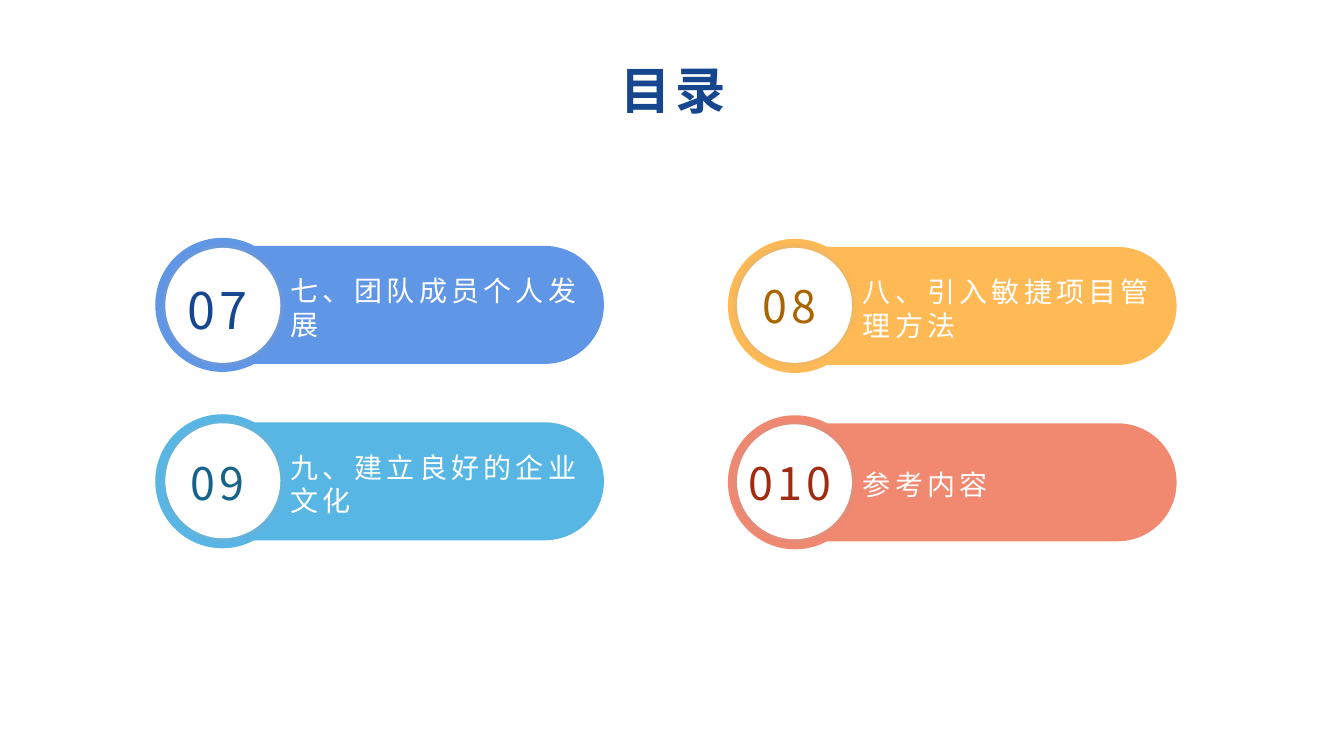
import pptx
import pptx.util
import pptx.dml.color
import pptx.enum.shapes
import pptx.enum.text
import pptx.oxml
import pptx.oxml.ns

Inches = pptx.util.Inches
Shape = pptx.enum.shapes.MSO_SHAPE
Align = pptx.enum.text.PP_ALIGN
Anchor = pptx.enum.text.MSO_ANCHOR

# Content: column, row, number, number size, label, pill colour, number colour
TITLE = "目录"
CHAPTERS = [
    (0, 0, "07", 36, "七、团队成员个人发展", "6096E6", "16468D"),
    (1, 0, "08", 32, "八、引入敏捷项目管理方法", "FFBA55", "AA6500"),
    (0, 1, "09", 32, "九、建立良好的企业文化", "58B6E5", "156389"),
    (1, 1, "010", 32, "参考内容", "F18870", "A12B10"),
]
FONT = "Noto Sans CJK SC"
NAVY, WHITE = "16468D", "FFFFFF"

# Grid
LEFT, TOP = 1.54, 2.36
COLUMN_STEP, ROW_STEP, COLUMN_DROP = 5.68, 1.75, 0.01
RING, DISC = 1.33, 1.14
RIM = (RING - DISC) / 2
PILL_WIDTH, PILL_HEIGHT = 4.11, 1.17
LABEL_WIDTH = 3.21


def color(hex_value):
    return pptx.dml.color.RGBColor.from_string(hex_value)


def box(left, top, width, height):
    return [Inches(round(v, 2)) for v in (left, top, width, height)]


def add_plain(slide, kind, place, fill):
    shape = slide.shapes.add_shape(kind, *box(*place))
    shape.shadow.inherit = False
    shape.fill.solid()
    shape.fill.fore_color.rgb = color(fill)
    shape.line.fill.background()
    return shape


def add_glow(shape):
    effects = shape._element.spPr.find(pptx.oxml.ns.qn("a:effectLst"))
    effects.append(pptx.oxml.parse_xml(
        f'<a:outerShdw {pptx.oxml.ns.nsdecls("a")} blurRad="{pptx.util.Pt(5)}" dist="0" '
        'dir="0" algn="ctr" rotWithShape="0"><a:srgbClr val="A6A6A6">'
        '<a:alpha val="40000"/></a:srgbClr></a:outerShdw>'))


def write(shape, text, size, ink, align, anchor, bold=False):
    frame = shape.text_frame
    frame.word_wrap = True
    frame.auto_size = pptx.enum.text.MSO_AUTO_SIZE.NONE
    frame.vertical_anchor = anchor
    frame.margin_left = frame.margin_right = Inches(0.1)
    frame.margin_top, frame.margin_bottom = Inches(0.05), 0
    paragraph = frame.paragraphs[0]
    paragraph.alignment = align
    run = paragraph.add_run()
    run.text = text
    run.font.size = pptx.util.Pt(size)
    run.font.bold = bold
    run.font.color.rgb = color(ink)
    run.font.name = FONT
    # Letter spacing and East Asian font
    properties = run.font._element
    properties.set("spc", "300")
    properties.append(pptx.oxml.parse_xml(
        f'<a:ea {pptx.oxml.ns.nsdecls("a")} typeface="{FONT}"/>'))


def add_chapter(slide, column, row, number, size, label, fill, ink):
    left = LEFT + column * COLUMN_STEP
    top = TOP + row * ROW_STEP + column * COLUMN_DROP
    pill_left, pill_top = left + 0.34, top + 0.08

    pill = add_plain(slide, Shape.ROUNDED_RECTANGLE,
                     (pill_left, pill_top, PILL_WIDTH, PILL_HEIGHT), fill)
    pill.adjustments[0] = 0.5
    add_plain(slide, Shape.OVAL, (left, top, RING, RING), fill)
    disc = add_plain(slide, Shape.OVAL, (left + RIM, top + RIM, DISC, DISC), WHITE)
    add_glow(disc)

    number_box = slide.shapes.add_textbox(
        *box(left, TOP + row * ROW_STEP + 0.36, 1.23, 0.63))
    write(number_box, number, size, ink, Align.CENTER, Anchor.TOP)
    label_box = slide.shapes.add_textbox(
        *box(pill_left + PILL_WIDTH - LABEL_WIDTH, pill_top, LABEL_WIDTH, PILL_HEIGHT))
    write(label_box, label, 20, WHITE, Align.LEFT, Anchor.MIDDLE)


def main():
    deck = pptx.Presentation()
    deck.slide_width, deck.slide_height = Inches(13.33), Inches(7.5)
    slide = deck.slides.add_slide(deck.slide_layouts[5])

    # Title
    title = slide.shapes.title
    title.left, title.top, title.width, title.height = box(4.4, 0.54, 4.56, 0.66)
    write(title, TITLE, 36, NAVY, Align.CENTER, Anchor.TOP, bold=True)

    # Chapter pills
    for chapter in CHAPTERS:
        add_chapter(slide, *chapter)

    deck.save("out.pptx")


if __name__ == "__main__":
    main()
